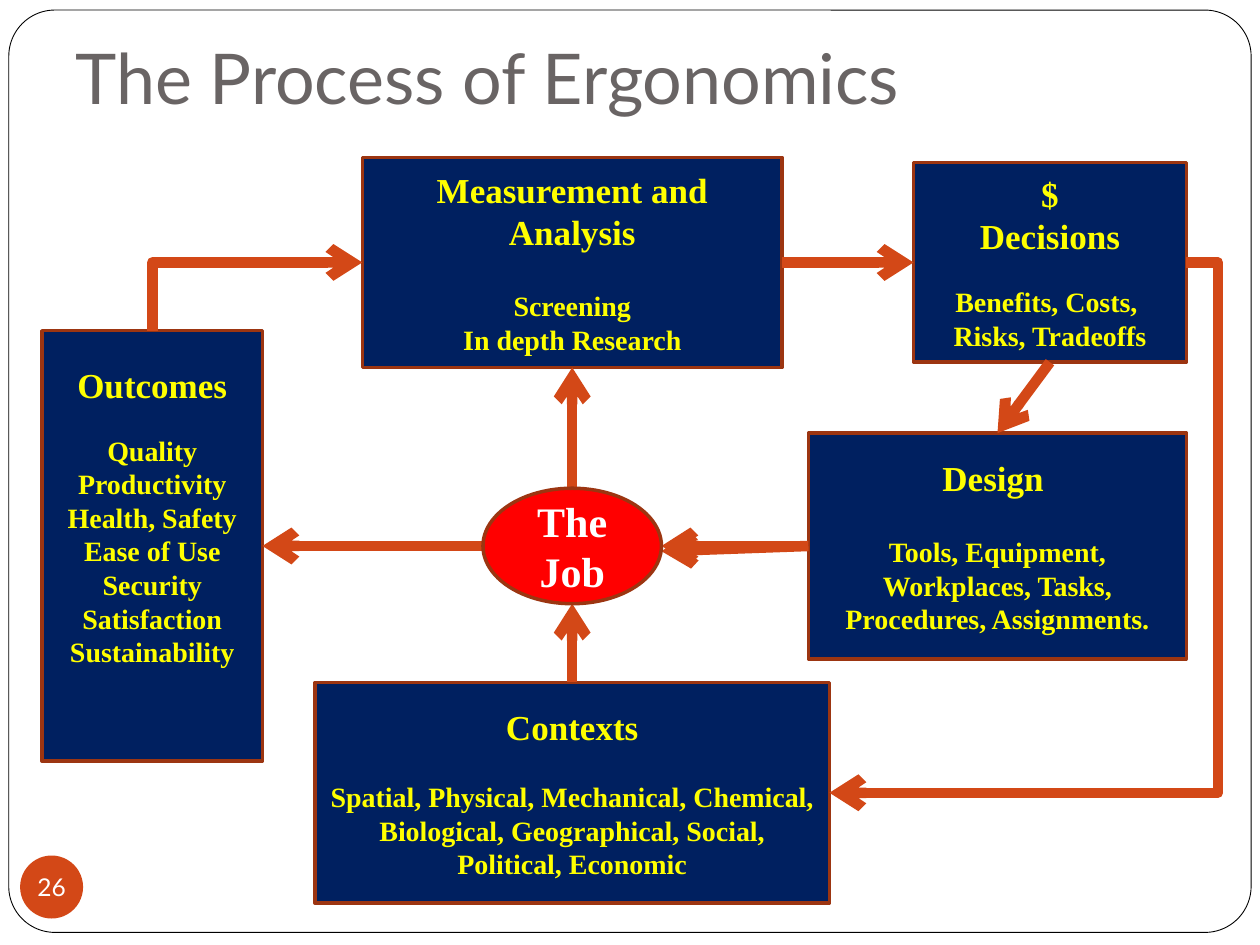
from lxml.etree import SubElement
from pptx import Presentation
from pptx.dml.color import RGBColor
from pptx.enum.shapes import MSO_CONNECTOR, MSO_SHAPE
from pptx.enum.text import MSO_ANCHOR, PP_ALIGN
from pptx.oxml.ns import qn
from pptx.util import Inches, Pt

COLORS = {"paper": "FFFFFF", "frame": "000000", "title": "696464", "accent": "D34817",
          "box": "002060", "edge": "9C3511", "text": "FFFF00", "job": "FF0000"}
SERIF, SANS = "Times New Roman", "Lato"
UNIT = 1 / 24  # grid step in inches

# name: (column, row, columns, rows), headings, gap in points, details, bottom inset in inches
BOXES = {
    "decisions": ((174, 31, 52, 38), ["$", "Decisions"], 16,
                  ["Benefits, Costs, ", "Risks, Tradeoffs"], 0.05),
    "measurement": ((69, 30, 80, 40), ["Measurement and Analysis"], 20.5,
                    ["Screening", "In depth Research"], 0.05),
    "contexts": ((60, 130, 98, 42), ["Contexts"], 18.5,
                 ["Spatial, Physical, Mechanical, Chemical, Biological, "
                  "Geographical, Social, Political, Economic"], 0.05),
    "design": ((154, 82.5, 72, 43), ["Design "], 20.5,
               ["Tools, Equipment, Workplaces, Tasks, Procedures, Assignments."], 0.05),
    "outcomes": ((8, 63, 42, 82), ["Outcomes"], 16,
                 ["Quality", "Productivity", "Health, Safety", "Ease of Use",
                  "Security", "Satisfaction", "Sustainability"], 0.53),
}
JOB = (92, 93, 34, 22)
TOP, LEFT, BOTTOM, RIGHT = range(4)

# each end is a (box, side) pair or a (column, row) point on the job ellipse
ARROWS = [
    (("design", LEFT), (126, 105)),
    (("design", LEFT), (126, 104)),
    (("decisions", BOTTOM), ("design", TOP)),
    (("contexts", TOP), (109, 115)),
    (("measurement", RIGHT), ("decisions", LEFT)),
    ((109, 93), ("measurement", BOTTOM)),
    ((92, 104), ("outcomes", RIGHT)),
]


def grid(*steps):
    return [Inches(n * UNIT) for n in steps]


def rgb(name):
    return RGBColor.from_string(COLORS[name])


def add_shape(slide, kind, place, fill, line=None, width=2):
    sp = slide.shapes.add_shape(kind, *place)
    sp.shadow.inherit = False
    sp.fill.solid()
    sp.fill.fore_color.rgb = rgb(fill)
    if line:
        sp.line.color.rgb = rgb(line)
        sp.line.width = Pt(width)
    else:
        sp.line.fill.background()
    return sp


def write(sp, lines, font, color, bold=False, align=PP_ALIGN.CENTER,
          anchor=MSO_ANCHOR.MIDDLE):
    """Fill a shape with (text, size, space before) paragraphs."""
    tf = sp.text_frame
    tf.word_wrap = True
    tf.vertical_anchor = anchor
    for i, (text, size, gap) in enumerate(lines):
        p = tf.add_paragraph() if i else tf.paragraphs[0]
        p.text = text
        p.alignment = align
        p.space_before = Pt(gap)
        f = p.runs[0].font
        f.name, f.size, f.bold = font, Pt(size), bold
        f.color.rgb = rgb(color)
    return tf


def point(end):
    """Give an arrow end's place; a joined end is moved when it is connected."""
    return grid(0, 0) if end[0] in BOXES else grid(*end)


def add_arrow(slide, boxes, start, end, kind=MSO_CONNECTOR.STRAIGHT):
    cxn = slide.shapes.add_connector(kind, *point(start), *point(end))
    if start[0] in boxes:
        cxn.begin_connect(boxes[start[0]], start[1])
    if end[0] in boxes:
        cxn.end_connect(boxes[end[0]], end[1])
    cxn.line.color.rgb = rgb("accent")
    cxn.line.width = Pt(6)
    SubElement(cxn.line._get_or_add_ln(), qn("a:tailEnd"), type="arrow")
    SubElement(cxn._element.spPr, qn("a:effectLst"))
    return cxn


def turn_single_corner(cxn):
    """Make an elbow go up first, then right, with one corner."""
    left, top, width, height = cxn.left, cxn.top, cxn.width, cxn.height
    cxn.left, cxn.top = left + (width - height) // 2, top + (height - width) // 2
    cxn.width, cxn.height = height, width
    spPr = cxn._element.spPr
    xfrm = spPr.find(qn("a:xfrm"))
    for key, value in (("rot", "5400000"), ("flipH", "1"), ("flipV", "1")):
        xfrm.set(key, value)
    spPr.find(qn("a:prstGeom")).set("prst", "bentConnector2")


def main():
    prs = Presentation()
    prs.slide_width, prs.slide_height = Inches(10), Inches(7.5)
    s = prs.slides.add_slide(prs.slide_layouts[6])

    frame = add_shape(s, MSO_SHAPE.ROUNDED_RECTANGLE,
                      [Inches(n) for n in (0.07, 0.08, 9.86, 7.32)], "paper", "frame", 0.5)
    frame.adjustments[0] = 0.05
    title = s.shapes.add_textbox(*[Inches(n) for n in (0.5, 0.17, 9, 0.87)])
    tf = write(title, [("The Process of Ergonomics", 40, 0)], SANS, "title",
               align=PP_ALIGN.LEFT, anchor=MSO_ANCHOR.BOTTOM)
    tf.margin_bottom = Inches(0.1)
    badge = add_shape(s, MSO_SHAPE.OVAL,
                      [Inches(n) for n in (0.16, 6.79, 0.5, 0.5)], "accent")
    tf = write(badge, [("26", 14, 0)], SANS, "paper")
    tf.margin_left = tf.margin_right = tf.margin_top = tf.margin_bottom = 0
    tf.word_wrap = False

    boxes = {}
    for name, (place, headings, gap, details, inset) in BOXES.items():
        sp = add_shape(s, MSO_SHAPE.RECTANGLE, grid(*place), "box", "edge")
        lines = [(text, 20, 0) for text in headings]
        lines += [(text, 16, 0 if i else gap) for i, text in enumerate(details)]
        write(sp, lines, SERIF, "text", bold=True).margin_bottom = Inches(inset)
        boxes[name] = sp

    for start, end in ARROWS:
        add_arrow(s, boxes, start, end)
    turn_single_corner(add_arrow(s, boxes, ("outcomes", TOP), ("measurement", LEFT),
                                 MSO_CONNECTOR.ELBOW))
    around = add_arrow(s, boxes, ("decisions", RIGHT), ("contexts", RIGHT),
                       MSO_CONNECTOR.ELBOW)
    geometry = around._element.spPr.find(qn("a:prstGeom"))
    guides = geometry.find(qn("a:avLst"))
    if guides is None:
        guides = SubElement(geometry, qn("a:avLst"))
    SubElement(guides, qn("a:gd"), name="adj1", fmla="val -8800")

    job = add_shape(s, MSO_SHAPE.OVAL, grid(*JOB), "job", "edge")
    write(job, [("The Job", 24, 0)], SERIF, "paper", bold=True)
    prs.save("out.pptx")


if __name__ == "__main__":
    main()
